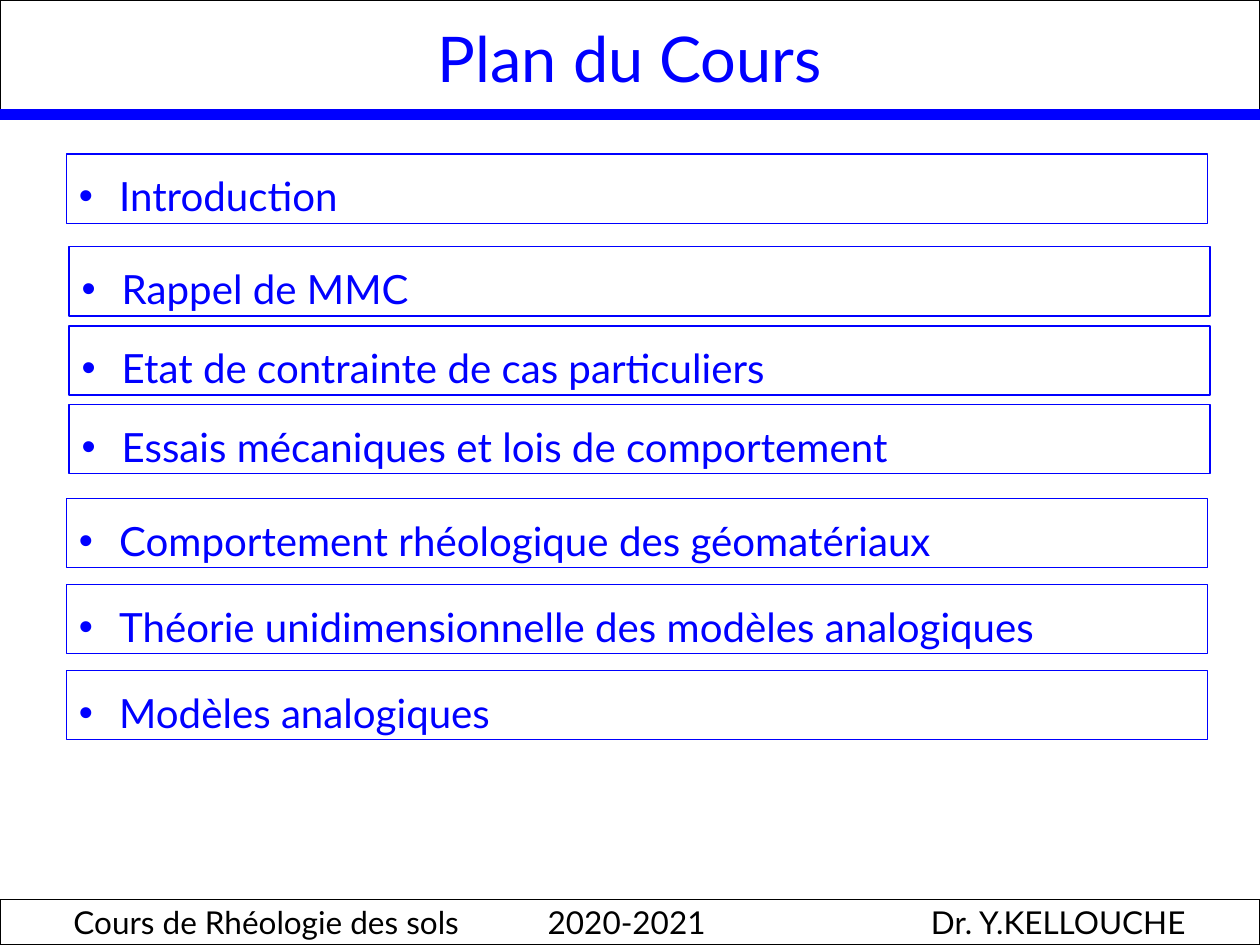
import pptx
import pptx.util
import pptx.dml.color
import pptx.enum.shapes
import pptx.enum.text
import pptx.oxml.ns
from lxml import etree

Pt = pptx.util.Pt
RGB = pptx.dml.color.RGBColor
ALIGN = pptx.enum.text.PP_ALIGN


class Theme:
    font = "Lato"
    blue = RGB(0x00, 0x00, 0xFF)
    black = RGB(0x00, 0x00, 0x00)
    white = RGB(0xFF, 0xFF, 0xFF)
    title, item, footer = Pt(36), Pt(23), Pt(18)


def add_box(s, left, top, width, height, color, weight):
    sp = s.shapes.add_shape(pptx.enum.shapes.MSO_SHAPE.RECTANGLE,
                            Pt(left), Pt(top), Pt(width), Pt(height))
    sp.shadow.inherit = False
    sp.fill.solid()
    sp.fill.fore_color.rgb = Theme.white
    sp.line.color.rgb = color
    sp.line.width = Pt(weight)
    tf = sp.text_frame
    tf.vertical_anchor = pptx.enum.text.MSO_ANCHOR.MIDDLE
    return tf


def add_run(p, text, size, color):
    r = p.add_run()
    r.text = text
    r.font.name = Theme.font
    r.font.size = size
    r.font.color.rgb = color


prs = pptx.Presentation()
prs.slide_width, prs.slide_height = Pt(720), Pt(540)
s = prs.slides.add_slide(prs.slide_layouts[6])

# Title band
tf = add_box(s, 0, 0, 720, 65.5, Theme.black, 1.5)
tf.word_wrap = False
p = tf.paragraphs[0]
p.alignment = ALIGN.CENTER
add_run(p, "Plan du Cours", Theme.title, Theme.blue)

# Rule under the title
rule = s.shapes.add_connector(pptx.enum.shapes.MSO_CONNECTOR.STRAIGHT,
                              Pt(0), Pt(65.5), Pt(720), Pt(65.5))
rule.line.color.rgb = Theme.blue
rule.line.width = Pt(6)
etree.SubElement(rule._element.spPr, pptx.oxml.ns.qn("a:effectLst"))

# Course outline: left, top, text
items = [
    (38, 88, "Introduction"),
    (39.5, 141, "Rappel de MMC"),
    (39.5, 186.2, "Etat de contrainte de cas particuliers"),
    (39.5, 231.2, "Essais mécaniques et lois de comportement"),
    (38, 284.7, "Comportement rhéologique des géomatériaux"),
    (38, 334, "Théorie unidimensionnelle des modèles analogiques"),
    (38, 383, "Modèles analogiques"),
]
for left, top, text in items:
    tf = add_box(s, left, top, 652, 39.6, Theme.blue, 0.75)
    tf.word_wrap = True
    p = tf.paragraphs[0]
    p.alignment = ALIGN.LEFT
    p.line_spacing = 1.3
    pPr = p._p.get_or_add_pPr()
    pPr.set("marL", str(Pt(23)))
    pPr.set("indent", str(-Pt(23)))
    etree.SubElement(pPr, pptx.oxml.ns.qn("a:buFont"), typeface="Arial")
    etree.SubElement(pPr, pptx.oxml.ns.qn("a:buChar"), char="•")
    add_run(p, text, Theme.item, Theme.blue)

# Footer: course, year and author set on tab stops
tf = add_box(s, 0, 514, 720, 26, Theme.black, 0.75)
tf.word_wrap = True
tf.margin_left, tf.margin_right = Pt(42), Pt(0)
p = tf.paragraphs[0]
p.alignment = ALIGN.LEFT
tabs = etree.SubElement(p._p.get_or_add_pPr(), pptx.oxml.ns.qn("a:tabLst"))
for pos in (271, 490):
    etree.SubElement(tabs, pptx.oxml.ns.qn("a:tab"), pos=str(Pt(pos)), algn="l")
add_run(p, "Cours de Rhéologie des sols\t2020-2021\tDr. Y.KELLOUCHE",
        Theme.footer, Theme.black)

prs.save("out.pptx")
